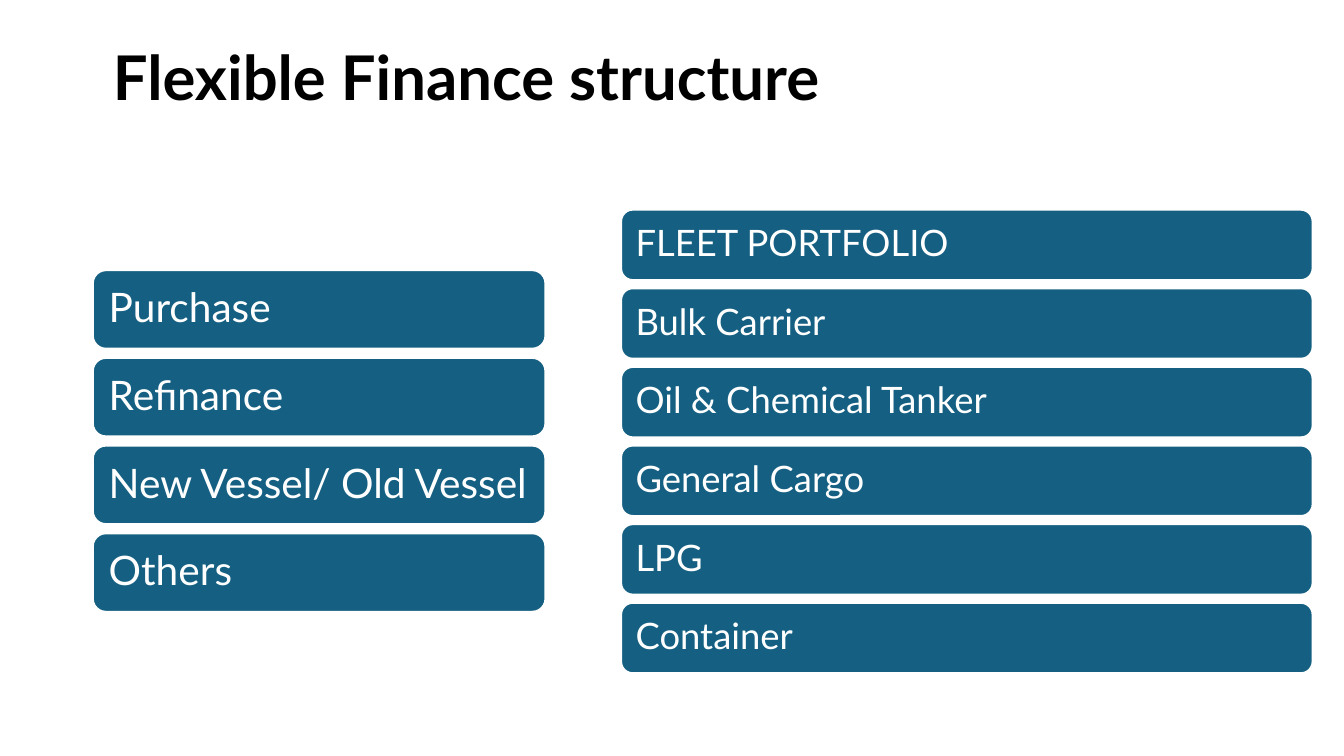
from pptx import Presentation
from pptx.dml.color import RGBColor
from pptx.enum.shapes import MSO_SHAPE
from pptx.enum.text import MSO_ANCHOR, PP_ALIGN
from pptx.util import Inches, Pt

ROUNDED = MSO_SHAPE.ROUNDED_RECTANGLE
TOP, MIDDLE = MSO_ANCHOR.TOP, MSO_ANCHOR.MIDDLE
LEFT = PP_ALIGN.LEFT
BLACK = RGBColor(0x00, 0x00, 0x00)
WHITE = RGBColor(0xFF, 0xFF, 0xFF)
TEAL = RGBColor(0x15, 0x60, 0x82)
FONT = "Lato"

TITLE = "Flexible Finance structure"
COLUMNS = [
    {
        "labels": ["Purchase", "Refinance", "New Vessel/ Old Vessel", "Others"],
        "left": 0.92, "top": 2.68, "width": 4.49, "height": 0.78,
        "step": 0.87, "inset": 0.12, "size": 29,
    },
    {
        "labels": ["FLEET PORTFOLIO", "Bulk Carrier", "Oil & Chemical Tanker",
                   "General Cargo", "LPG", "Container"],
        "left": 6.16, "top": 2.08, "width": 6.86, "height": 0.7,
        "step": 0.78, "inset": 0.11, "size": 26,
    },
]


def set_all(target, values):
    for name, value in values.items():
        setattr(target, name, value)


def write(box, text, frame_format, font_format):
    frame = box.text_frame
    set_all(frame, {"word_wrap": True, **frame_format})
    para = frame.paragraphs[0]
    set_all(para, {"alignment": LEFT, "line_spacing": 0.9})
    span = para.add_run()
    span.text = text
    set_all(span.font, {"name": FONT, **font_format})
    span.font.color.rgb = BLACK if font_format["bold"] else WHITE


def add_title(page):
    box = page.shapes.add_textbox(Inches(0.92), Inches(0.4), Inches(11.5), Inches(1.45))
    write(box, TITLE,
          {"vertical_anchor": TOP, "margin_left": Inches(0.2), "margin_top": Inches(0.07)},
          {"size": Pt(44), "bold": True})


def add_column(page, column):
    inset = Inches(column["inset"])
    sides = ("margin_left", "margin_top", "margin_right", "margin_bottom")
    frame_format = {"vertical_anchor": MIDDLE, **dict.fromkeys(sides, inset)}
    for row, label in enumerate(column["labels"]):
        top = column["top"] + row * column["step"]
        box = page.shapes.add_shape(ROUNDED, Inches(column["left"]), Inches(top),
                                    Inches(column["width"]), Inches(column["height"]))
        box.shadow.inherit = False
        box.fill.solid()
        box.fill.fore_color.rgb = TEAL
        box.line.color.rgb = WHITE
        box.line.width = Pt(1.5)
        write(box, label, frame_format, {"size": Pt(column["size"]), "bold": False})


def main():
    deck = Presentation()
    set_all(deck, {"slide_width": Inches(13.33), "slide_height": Inches(7.5)})
    page = deck.slides.add_slide(deck.slide_layouts[6])
    add_title(page)
    for column in COLUMNS:
        add_column(page, column)
    deck.save("out.pptx")


if __name__ == "__main__":
    main()
